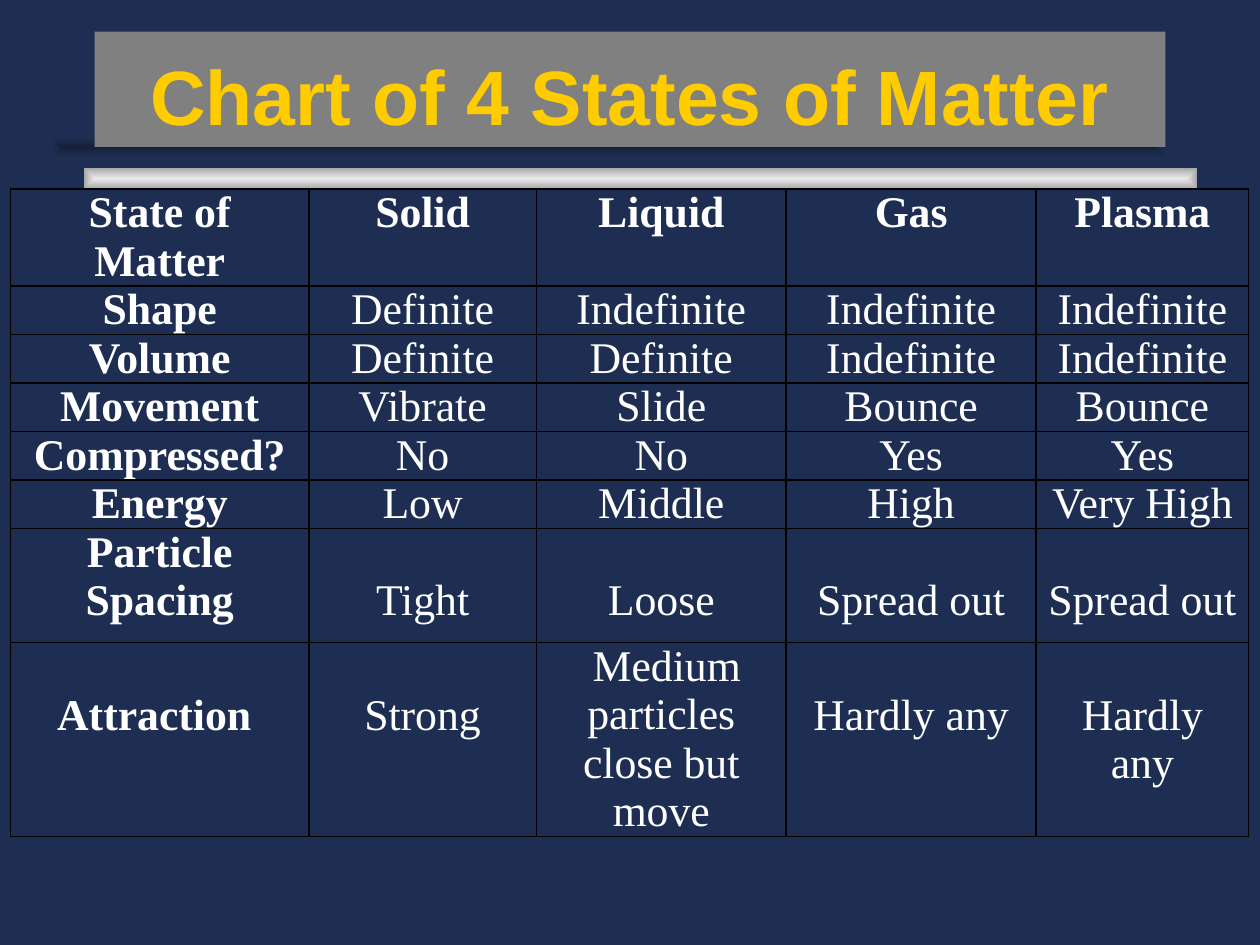
import pptx
import pptx.dml.color
import pptx.enum.shapes
import pptx.enum.text
import pptx.oxml
import pptx.oxml.ns
import pptx.util

Pt = pptx.util.Pt
COLORS = {
    "background": "1E2E53",
    "panel": "808080",
    "title": "FFCC00",
    "text": "FFFFFF",
    "border": "000000",
    "bar_center": "EAEAEA",
    "bar_edge": "A7A7A7",
    "shade": "15213B",
}
LINE = 27.7  # height of one table line at 25 pt

COLUMN_WIDTHS = [170.5, 130, 142.8, 142.8, 121.5]
ROW_HEIGHTS = [2 * LINE] + [LINE] * 5 + [65.4, 4 * LINE]
ROWS = [
    ["State of Matter", "Solid", "Liquid", "Gas", "Plasma"],
    ["Shape", "Definite", "Indefinite", "Indefinite", "Indefinite"],
    ["Volume", "Definite", "Definite", "Indefinite", "Indefinite"],
    ["Movement", "Vibrate", "Slide", "Bounce", "Bounce"],
    ["Compressed?", "No", "No", "Yes", "Yes"],
    ["Energy", "Low", "Middle", "High", "Very High"],
    ["Particle Spacing", "Tight", "Loose", "Spread out", "Spread out"],
    ["Attraction ", "Strong", " Medium particles close but move",
     "Hardly any", "Hardly any"],
]
# Cells of the two tall rows whose text starts at the top
TOP_CELLS = {(6, 0), (7, 2)}


def rgb(name):
    return pptx.dml.color.RGBColor.from_string(COLORS[name])


class SlideBuilder:
    title_font = "Arial"
    table_font = "Times New Roman"

    def __init__(self, slide):
        self.slide = slide
        slide.background.fill.solid()
        slide.background.fill.fore_color.rgb = rgb("background")

    def add_run(self, paragraph, text, font, size, color, bold):
        paragraph.alignment = pptx.enum.text.PP_ALIGN.CENTER
        run = paragraph.add_run()
        run.text = text
        run.font.name = font
        run.font.size = Pt(size)
        run.font.bold = bold
        run.font.color.rgb = rgb(color)

    def bar(self, left, top, width, height, center, edge):
        """Add a bar shaded from its center out to its edges."""
        shape = self.slide.shapes.add_shape(
            pptx.enum.shapes.MSO_SHAPE.RECTANGLE,
            Pt(left), Pt(top), Pt(width), Pt(height))
        shape.shadow.inherit = False
        shape.line.fill.background()
        shape.fill.gradient()
        for stop, color in zip(shape.fill.gradient_stops, (center, edge)):
            stop.color.rgb = rgb(color)
        gradient = shape.element.spPr.find(pptx.oxml.ns.qn("a:gradFill"))
        gradient.remove(gradient.find(pptx.oxml.ns.qn("a:lin")))
        gradient.append(pptx.oxml.parse_xml(
            f'<a:path {pptx.oxml.ns.nsdecls("a")} path="shape">'
            '<a:fillToRect l="50000" t="50000" r="50000" b="50000"/></a:path>'))

    def title(self, text, left, top, width, height):
        shape = self.slide.shapes.title
        shape.left, shape.top = Pt(left), Pt(top)
        shape.width, shape.height = Pt(width), Pt(height)
        shape.fill.solid()
        shape.fill.fore_color.rgb = rgb("panel")
        frame = shape.text_frame
        frame.auto_size = pptx.enum.text.MSO_AUTO_SIZE.NONE
        frame.vertical_anchor = pptx.enum.text.MSO_ANCHOR.BOTTOM
        self.add_run(frame.paragraphs[0], text, self.title_font, 44, "title", True)
        # The panel lies over the bars
        shape.element.getparent().append(shape.element)

    def cell_borders(self, cell):
        properties = cell._tc.get_or_add_tcPr()
        for index, side in enumerate("LRTB"):
            properties.insert(index, pptx.oxml.parse_xml(
                f'<a:ln{side} {pptx.oxml.ns.nsdecls("a")} w="{Pt(1)}"><a:solidFill>'
                f'<a:srgbClr val="{COLORS["border"]}"/></a:solidFill></a:ln{side}>'))

    def table(self, rows, left, top, widths, heights):
        table = self.slide.shapes.add_table(
            len(rows), len(widths), Pt(left), Pt(top),
            Pt(sum(widths)), Pt(sum(heights))).table
        table.first_row = table.horz_banding = False
        for column, width in zip(table.columns, widths):
            column.width = Pt(width)
        for row, height in zip(table.rows, heights):
            row.height = Pt(height)
        for row_index, texts in enumerate(rows):
            for column_index, text in enumerate(texts):
                cell = table.cell(row_index, column_index)
                lowered = row_index >= 6 and (row_index, column_index) not in TOP_CELLS
                cell.margin_left = cell.margin_right = Pt(5)
                cell.margin_top = Pt(LINE if lowered else 0)
                cell.margin_bottom = Pt(0)
                cell.fill.background()
                self.cell_borders(cell)
                self.add_run(cell.text_frame.paragraphs[0], text, self.table_font,
                             25, "text", row_index == 0 or column_index == 0)


def main():
    presentation = pptx.Presentation()
    presentation.slide_width, presentation.slide_height = Pt(720), Pt(540)
    title_only = presentation.slide_layouts[5]
    builder = SlideBuilder(presentation.slides.add_slide(title_only))
    builder.bar(48, 96, 636, 12, "bar_center", "bar_edge")
    builder.bar(30, 78, 636, 12, "shade", "background")
    builder.title("Chart of 4 States of Matter", 54, 18, 612, 66)
    builder.table(ROWS, 6, 108, COLUMN_WIDTHS, ROW_HEIGHTS)
    presentation.save("out.pptx")


if __name__ == "__main__":
    main()
